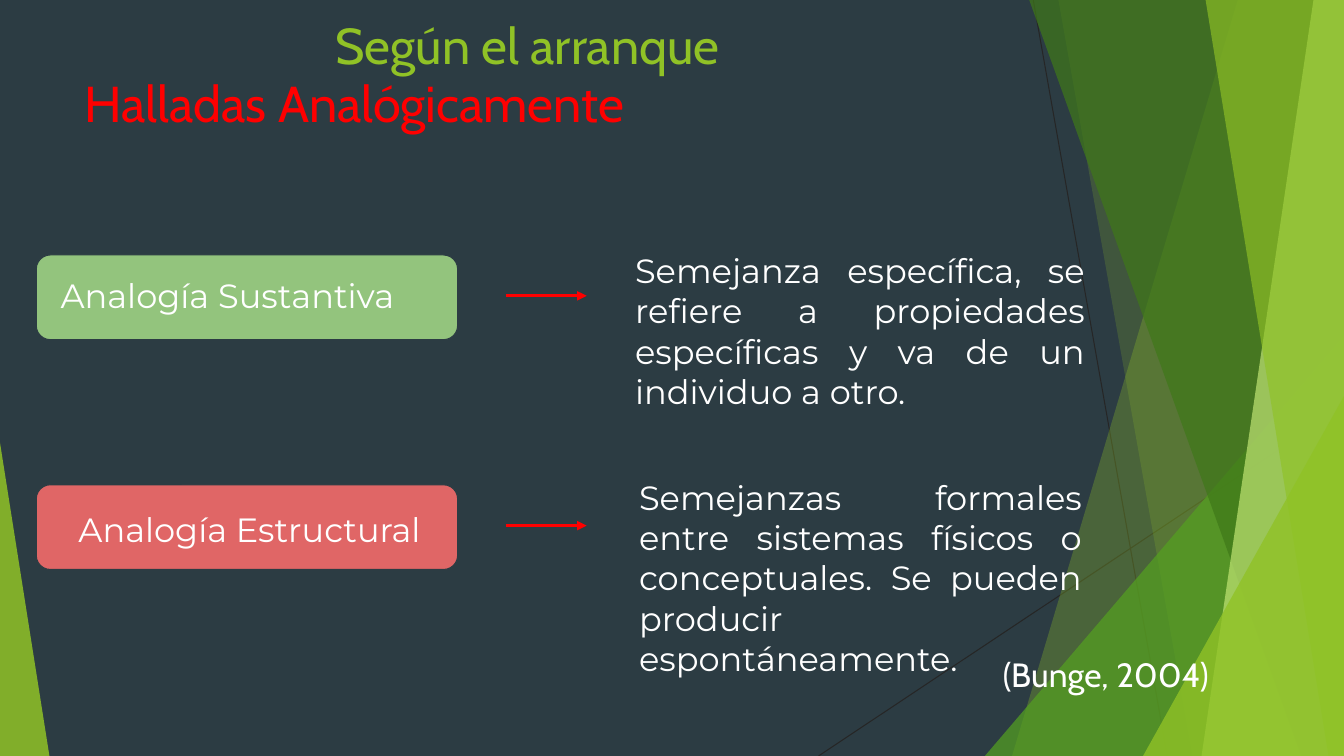
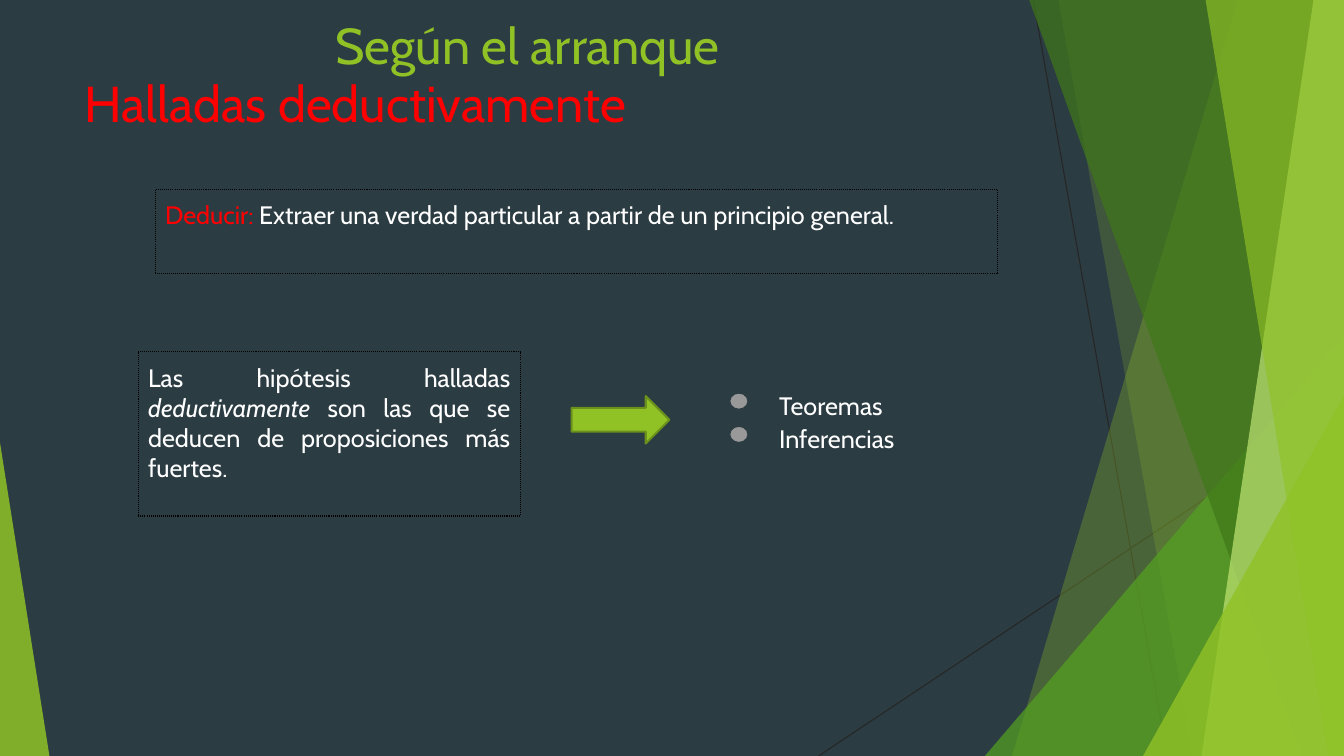
from lxml.etree import SubElement
from pptx import Presentation
from pptx.dml.color import RGBColor
from pptx.enum.dml import MSO_LINE
from pptx.enum.shapes import MSO_CONNECTOR, MSO_SHAPE
from pptx.enum.text import MSO_ANCHOR, PP_ALIGN
from pptx.oxml.ns import qn
from pptx.util import Inches, Pt

SLIDE_WIDTH, SLIDE_HEIGHT = Inches(13.33), Inches(7.5)

SLATE = RGBColor(0x2C, 0x3C, 0x43)
LIME = RGBColor(0x90, 0xC2, 0x26)
PALE_LIME = RGBColor(0xC0, 0xE4, 0x74)
GREEN = RGBColor(0x54, 0xA0, 0x21)
FOREST = RGBColor(0x3F, 0x78, 0x19)
OLIVE = RGBColor(0x6B, 0x90, 0x1C)
SAGE = RGBColor(0x93, 0xC4, 0x7D)
CORAL = RGBColor(0xE0, 0x66, 0x66)
RED = RGBColor(0xFF, 0x00, 0x00)
GRAY = RGBColor(0x99, 0x99, 0x99)
CHARCOAL = RGBColor(0x26, 0x26, 0x26)
BLACK = RGBColor(0x00, 0x00, 0x00)
WHITE = RGBColor(0xFF, 0xFF, 0xFF)

HEADING_FONT, BODY_FONT = "Cabin", "Montserrat"
TITLE_INSETS = (0.1, 0.05, 0.1, 0.05)
WIDE_INSETS = (0.13,) * 4
BOX_INSETS = (0.1,) * 4

LABEL_LEFT, LABEL_WIDTH, LABEL_HEIGHT = 2.7, 31.35, 11.2
ARROW_START, ARROW_END = 37.65, 43.65
BULLET_TOP, BULLET_STEP = 52, 4.4


def across(percent):
    """Turn a share of the slide's width into a length."""
    return round(SLIDE_WIDTH * percent / 100)


def down(percent):
    """Turn a share of the slide's height into a length."""
    return round(SLIDE_HEIGHT * percent / 100)


def place(left, top, width, height):
    return across(left), down(top), across(width), down(height)


def paint(shape, fill=None, opacity=100, line=None, line_width=0.75, dash=None):
    shape.shadow.inherit = False
    if fill is None:
        shape.fill.background()
    else:
        shape.fill.solid()
        shape.fill.fore_color.rgb = fill
    if opacity < 100:
        color = shape.element.spPr.find(qn("a:solidFill"))[0]
        SubElement(color, qn("a:alpha"), val=str(opacity * 1000))
    if line is None:
        shape.line.fill.background()
    else:
        shape.line.color.rgb = line
        shape.line.width = Pt(line_width)
        if dash is not None:
            shape.line.dash_style = dash


def add_preset(slide, preset, box, adjustment=None, **look):
    shape = slide.shapes.add_shape(preset, *place(*box))
    if adjustment is not None:
        shape.adjustments[0] = adjustment
    paint(shape, **look)
    return shape


def add_line(slide, start, end, color, width, arrow=False):
    connector = slide.shapes.add_connector(
        MSO_CONNECTOR.STRAIGHT,
        across(start[0]), down(start[1]), across(end[0]), down(end[1]))
    connector.line.color.rgb = color
    connector.line.width = Pt(width)
    properties = connector.element.spPr
    if arrow:
        SubElement(properties.find(qn("a:ln")), qn("a:tailEnd"), type="triangle")
    SubElement(properties, qn("a:effectLst"))


def write_text(shape, text, font=HEADING_FONT, size=18, color=WHITE,
               align=PP_ALIGN.LEFT, insets=BOX_INSETS):
    """Fill a shape with a string, or with (string, format) pairs as runs."""
    frame = shape.text_frame
    frame.word_wrap = True
    frame.vertical_anchor = MSO_ANCHOR.TOP
    frame.margin_left, frame.margin_top, frame.margin_right, frame.margin_bottom = map(
        Inches, insets)
    paragraph = frame.paragraphs[0]
    paragraph.alignment = align
    for content, own in [(text, {})] if isinstance(text, str) else text:
        run = paragraph.add_run()
        run.text = content
        run.font.name = font
        run.font.size = Pt(size)
        run.font.color.rgb = own.get("color", color)
        run.font.italic = own.get("italic")


def add_text(slide, text, box, **text_format):
    write_text(slide.shapes.add_textbox(*place(*box)), text, **text_format)


def add_band(slide, top_left, bottom_left, color, opacity):
    """Draw a full-height band from a slanted left edge to the slide's right edge."""
    builder = slide.shapes.build_freeform(across(top_left), 0)
    builder.add_line_segments(
        [(SLIDE_WIDTH, 0), (SLIDE_WIDTH, SLIDE_HEIGHT),
         (across(bottom_left), SLIDE_HEIGHT)])
    paint(builder.convert_to_shape(), fill=color, opacity=opacity)


def add_corner(slide, left, top, width, peak, color, opacity):
    """Draw a triangle that stands on the slide's bottom edge."""
    add_preset(slide, MSO_SHAPE.ISOSCELES_TRIANGLE, (left, top, width, 100 - top),
               adjustment=peak, fill=color, opacity=opacity)


def add_decoration(slide):
    add_line(slide, (76.88, 0), (86.85, 100), CHARCOAL, 0.75)
    add_line(slide, (100, 53.73), (60.9, 100), CHARCOAL, 0.75)
    add_band(slide, 92.1, 75.3, LIME, 30)
    add_band(slide, 78.75, 88.73, LIME, 20)
    add_corner(slide, 73.28, 44.4, 26.72, 1, GREEN, 72)
    add_band(slide, 76.58, 96.83, FOREST, 70)
    add_band(slide, 97.73, 89.4, PALE_LIME, 70)
    add_band(slide, 89.7, 98.85, LIME, 65)
    add_corner(slide, 85.05, 52.4, 14.95, 1, LIME, 80)
    add_corner(slide, 0, 58.53, 3.68, 0, LIME, 85)


def add_themed_slide(presentation, subtitle):
    slide = presentation.slides.add_slide(presentation.slide_layouts[6])
    add_decoration(slide)
    add_text(slide, "Según el arranque", (4, 1.2, 70.5, 8), size=36, color=LIME,
             align=PP_ALIGN.CENTER, insets=TITLE_INSETS)
    add_text(slide, subtitle, (5.55, 8.93, 70.5, 19.2), size=36, color=RED,
             insets=TITLE_INSETS)
    return slide


def add_analogy(slide, label, top, color, align, insets, definition, definition_box):
    """Add a coloured label with an arrow to its definition."""
    shape = add_preset(slide, MSO_SHAPE.ROUNDED_RECTANGLE,
                       (LABEL_LEFT, top, LABEL_WIDTH, LABEL_HEIGHT),
                       fill=color, line=SLATE)
    write_text(shape, label, font=BODY_FONT, size=24, align=align, insets=insets)
    middle = top + LABEL_HEIGHT / 2 - 0.2
    add_line(slide, (ARROW_START, middle), (ARROW_END, middle), RED, 2.25, arrow=True)
    add_text(slide, definition, definition_box, font=BODY_FONT, size=24,
             align=PP_ALIGN.JUSTIFY, insets=WIDE_INSETS)


def add_dotted_box(slide, text, box):
    shape = add_preset(slide, MSO_SHAPE.RECTANGLE, box, line=BLACK,
                       dash=MSO_LINE.ROUND_DOT)
    write_text(shape, text, align=PP_ALIGN.JUSTIFY)


def add_results(slide, results):
    for index, result in enumerate(results):
        top = BULLET_TOP + index * BULLET_STEP
        add_preset(slide, MSO_SHAPE.OVAL, (54.3, top, 1.35, 2.13), fill=GRAY, line=SLATE)
        add_text(slide, result, (57.23, top - 1.73, 15.83, 5.87))


def build_analogy_slide(presentation):
    slide = add_themed_slide(presentation, "Halladas Analógicamente")
    add_analogy(slide, "Analogía Sustantiva", 33.73, SAGE, PP_ALIGN.LEFT,
                (0.2, 0.16, 0.1, 0.1),
                "Semejanza específica, se refiere a propiedades específicas "
                "y va de un individuo a otro.", (46.28, 31.33, 35.4, 15.87))
    add_analogy(slide, "Analogía Estructural", 64.13, CORAL, PP_ALIGN.CENTER,
                (0.2, 0.2, 0.15, 0.1),
                "Semejanzas formales entre sistemas físicos o conceptuales. "
                "Se pueden producir espontáneamente.", (46.58, 61.33, 34.88, 19.73))
    add_text(slide, "(Bunge, 2004)", (73.65, 84.8, 19.73, 6.8), size=24,
             insets=WIDE_INSETS)


def build_deduction_slide(presentation):
    slide = add_themed_slide(presentation, "Halladas deductivamente")
    add_dotted_box(slide, [
        ("Deducir: ", {"color": RED}),
        ("Extraer una verdad particular a partir de un principio general.", {}),
    ], (11.55, 25.07, 62.7, 11.07))
    add_dotted_box(slide, [
        ("Las hipótesis halladas ", {}),
        ("deductivamente ", {"italic": True}),
        ("son las que se deducen de proposiciones más fuertes.", {}),
    ], (10.28, 46.53, 28.43, 21.73))
    add_preset(slide, MSO_SHAPE.RIGHT_ARROW, (42.53, 52.4, 7.28, 6.27),
               fill=LIME, line=OLIVE, line_width=1.5)
    add_results(slide, ["Teoremas", "Inferencias"])


def main():
    presentation = Presentation()
    presentation.slide_width, presentation.slide_height = SLIDE_WIDTH, SLIDE_HEIGHT
    background = presentation.slide_master.background.fill
    background.solid()
    background.fore_color.rgb = SLATE
    build_analogy_slide(presentation)
    build_deduction_slide(presentation)
    presentation.save("out.pptx")


if __name__ == "__main__":
    main()
